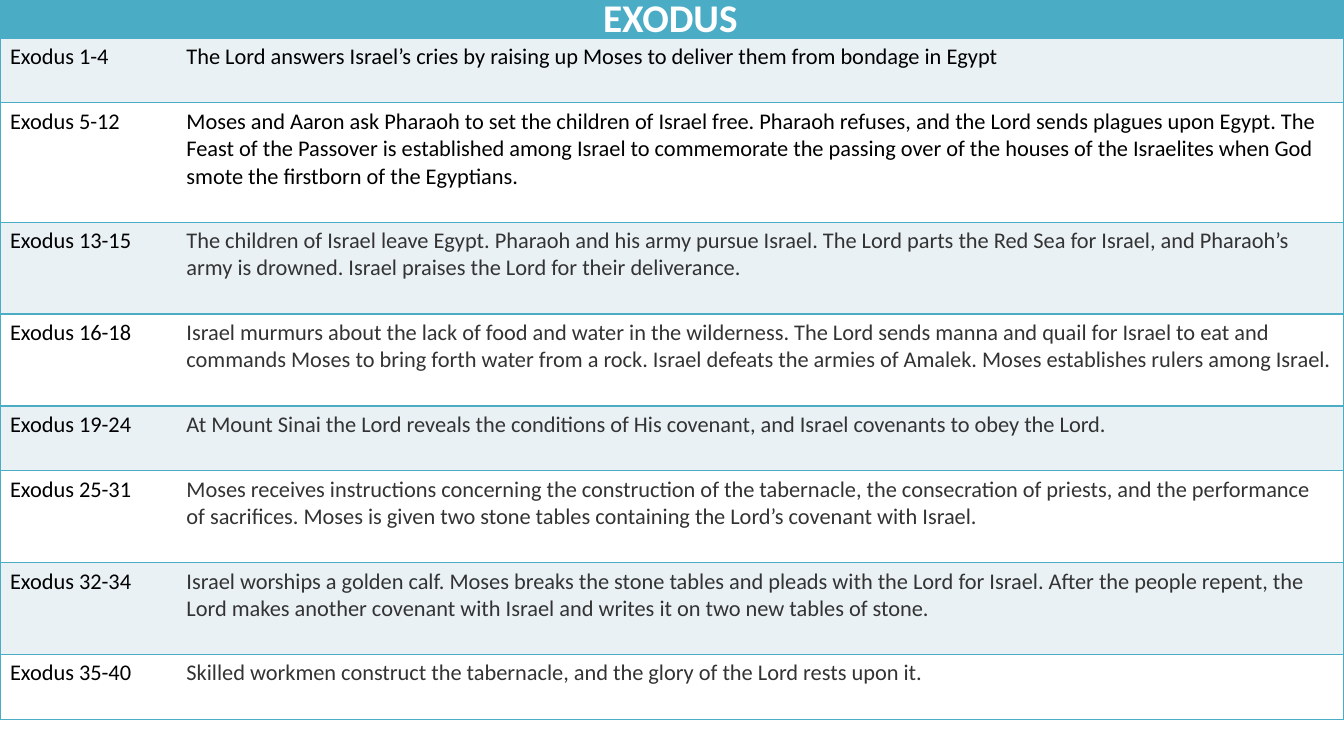
from lxml import etree
from pptx import Presentation
from pptx.dml.color import RGBColor
from pptx.enum.text import MSO_ANCHOR, PP_ALIGN
from pptx.oxml.ns import qn
from pptx.util import Pt

MID = MSO_ANCHOR.MIDDLE
TOP = MSO_ANCHOR.TOP
LEFT = PP_ALIGN.LEFT
MIDX = PP_ALIGN.CENTER

HUES = {
    "teal": "4BACC6",
    "band": "E9F1F5",
    "white": "FFFFFF",
    "black": "000000",
    "gray": "333333",
}
WIDE, HIGH = 960, 540
HEAD = 27.3   # height of the heading band
LINE = 19.5   # height of one line of body text
PAD = 7.2     # top and bottom insets of a cell together

# Chapters, summary, lines it fills, colour of the summary
ROWS = [
    ("Exodus 1-4", "The Lord answers Israel’s cries by raising up Moses to deliver "
     "them from bondage in Egypt", 1, "black"),
    ("Exodus 5-12", "Moses and Aaron ask Pharaoh to set the children of Israel free. "
     "Pharaoh refuses, and the Lord sends plagues upon Egypt. The Feast of the Passover "
     "is established among Israel to commemorate the passing over of the houses of the "
     "Israelites when God smote the firstborn of the Egyptians.", 3, "black"),
    ("Exodus 13-15", "The children of Israel leave Egypt. Pharaoh and his army pursue "
     "Israel. The Lord parts the Red Sea for Israel, and Pharaoh’s army is drowned. "
     "Israel praises the Lord for their deliverance.", 2, "gray"),
    ("Exodus 16-18", "Israel murmurs about the lack of food and water in the wilderness. "
     "The Lord sends manna and quail for Israel to eat and commands Moses to bring forth "
     "water from a rock. Israel defeats the armies of Amalek. Moses establishes rulers "
     "among Israel.", 2, "gray"),
    ("Exodus 19-24", "At Mount Sinai the Lord reveals the conditions of His covenant, "
     "and Israel covenants to obey the Lord.", 1, "gray"),
    ("Exodus 25-31", "Moses receives instructions concerning the construction of the "
     "tabernacle, the consecration of priests, and the performance of sacrifices. Moses "
     "is given two stone tables containing the Lord’s covenant with Israel.", 2, "gray"),
    ("Exodus 32-34", "Israel worships a golden calf. Moses breaks the stone tables and "
     "pleads with the Lord for Israel. After the people repent, the Lord makes another "
     "covenant with Israel and writes it on two new tables of stone.", 2, "gray"),
    ("Exodus 35-40", "Skilled workmen construct the tabernacle, and the glory of the "
     "Lord rests upon it.", 1, "gray"),
]


def write(frame, text, size=16, hue="black", bold=False, align=LEFT):
    """Put one formatted paragraph in a text frame."""
    para = frame.paragraphs[0]
    para.alignment = align
    run = para.add_run()
    run.text = text
    font = run.font
    font.name, font.size, font.bold = "Calibri", Pt(size), bold
    font.color.rgb = RGBColor.from_string(HUES[hue])


def edge(cell, sides):
    """Draw teal borders on the given sides and none on the others."""
    props = cell._tc.get_or_add_tcPr()
    for side in "LRTB":
        line = etree.SubElement(props, qn(f"a:ln{side}"), w=str(Pt(1)))
        if side in sides:
            fill = etree.SubElement(line, qn("a:solidFill"))
            etree.SubElement(fill, qn("a:srgbClr"), val=HUES["teal"])
        else:
            etree.SubElement(line, qn("a:noFill"))


def paint(cell, hue):
    cell.fill.solid()
    cell.fill.fore_color.rgb = RGBColor.from_string(HUES[hue])


def add_grid(slide, x, y, w):
    """Table of chapters and summaries; each row leaves one line free."""
    highs = [HEAD] + [(row[2] + 1) * LINE + PAD for row in ROWS]
    grid = slide.shapes.add_table(
        len(highs), 2, Pt(x), Pt(y), Pt(w), Pt(sum(highs))).table
    grid.first_row = grid.horz_banding = False
    first = 126
    for col, wide in zip(grid.columns, (first, w - first)):
        col.width = Pt(wide)
    for i, high in enumerate(highs):
        grid.rows[i].height = Pt(high)
        hue = "teal" if i == 0 else "band" if i % 2 else "white"
        for j, sides in enumerate(("LTB", "RTB")):
            cell = grid.cell(i, j)
            edge(cell, sides)
            paint(cell, hue)
            cell.vertical_anchor = TOP
            if i == 0:
                cell.margin_top = cell.margin_bottom = 0
            else:
                tone = ROWS[i - 1][3] if j else "black"
                write(cell.text_frame, ROWS[i - 1][j], hue=tone)


def add_title(slide, x, y, w, h):
    """Title laid over the heading band, in front of the table."""
    title = slide.shapes.title
    title.left, title.top, title.width, title.height = map(Pt, (x, y, w, h))
    frame = title.text_frame
    frame.word_wrap = False
    frame.vertical_anchor = MID
    write(frame, "EXODUS", size=28, hue="white", bold=True, align=MIDX)
    slide.shapes.element.append(title.element)


def main():
    deck = Presentation()
    deck.slide_width, deck.slide_height = Pt(WIDE), Pt(HIGH)
    slide = deck.slides.add_slide(deck.slide_layouts[5])
    add_grid(slide, 0, 0, WIDE)
    add_title(slide, 420.5, -8.6, 116.6, 41)
    deck.save("out.pptx")


if __name__ == "__main__":
    main()
